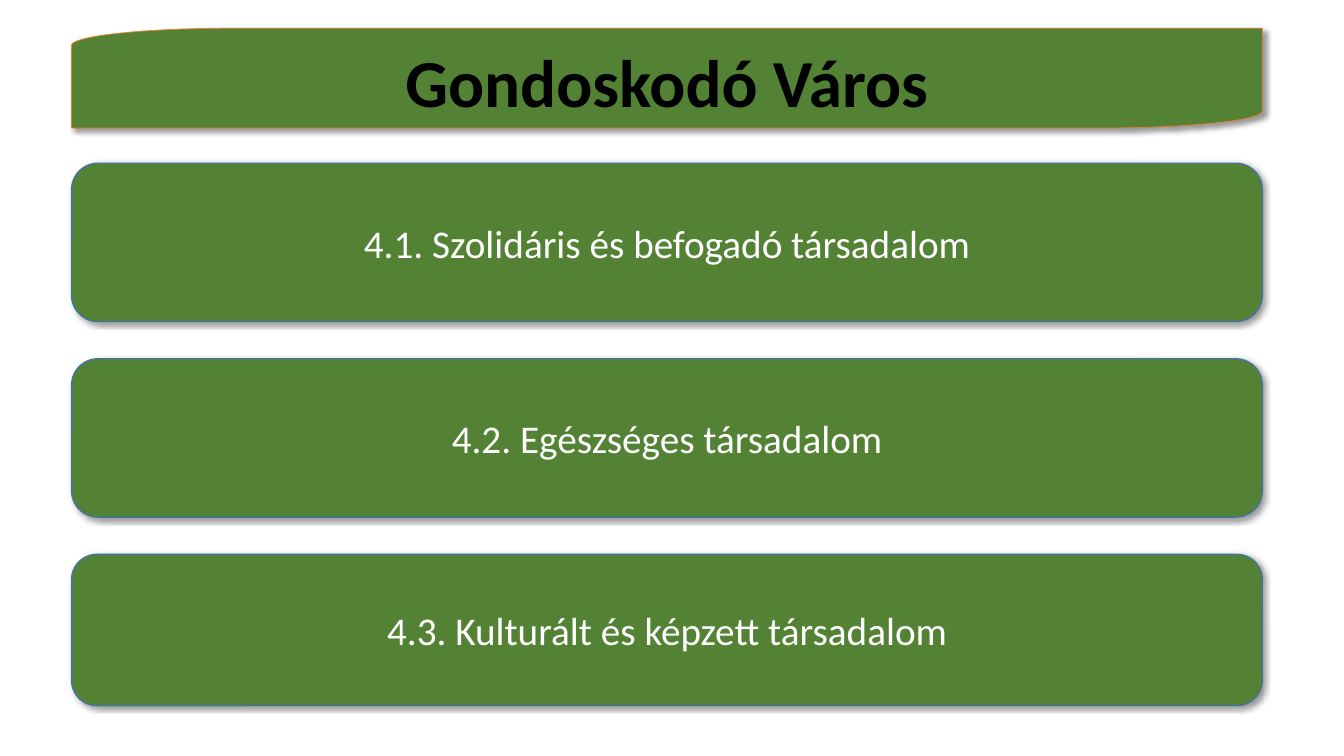
"""Build the caring city slide: a title banner above three goal panels."""
import math
from dataclasses import dataclass

import pptx
import pptx.dml.color
import pptx.enum.shapes
import pptx.enum.text
import pptx.oxml
import pptx.oxml.ns
import pptx.util
from pptx.util import Inches

COLORS = {
    "green": "548235",
    "orange": "ED7D31",
    "blue": "43739E",
    "black": "000000",
    "white": "FFFFFF",
}
FONT = "Calibri"
LEFT, WIDTH = 0.71, 11.81
BANNER_TOP, BANNER_HEIGHT = 0.28, 0.99
CORNER_WIDTH, CORNER_HEIGHT = 1.61, 0.17
CORNER_STEPS = 24
GOALS_TOP, GOAL_PITCH = 1.62, 1.94


@dataclass(frozen=True)
class Goal:
    """A goal of the city and the height of its panel in inches."""

    text: str
    height: float


GOALS = [
    Goal("4.1. Szolidáris és befogadó társadalom", 1.57),
    Goal("4.2. Egészséges társadalom", 1.57),
    Goal("4.3. Kulturált és képzett társadalom", 1.5),
]


def rgb(name: str) -> pptx.dml.color.RGBColor:
    """Return the named colour."""
    return pptx.dml.color.RGBColor.from_string(COLORS[name])


def style_panel(panel, line_color: str, line_width: float, distance: float) -> None:
    """Give a panel its green fill, outline and soft shadow."""
    panel.fill.solid()
    panel.fill.fore_color.rgb = rgb("green")
    panel.line.color.rgb = rgb(line_color)
    panel.line.width = pptx.util.Pt(line_width)
    panel.shadow.inherit = False
    effects = panel._element.spPr.find(pptx.oxml.ns.qn("a:effectLst"))
    effects.append(pptx.oxml.parse_xml(
        f'<a:outerShdw {pptx.oxml.ns.nsdecls("a")} blurRad="{pptx.util.Pt(4)}" '
        f'dist="{pptx.util.Pt(distance)}" dir="2700000" algn="tl" rotWithShape="0">'
        f'<a:srgbClr val="{COLORS["black"]}"><a:alpha val="40000"/></a:srgbClr>'
        "</a:outerShdw>"
    ))


def write_text(holder, text: str, size: float, color: str, bold: bool) -> None:
    """Write one centred line into a shape."""
    frame = holder.text_frame
    frame.text = text
    frame.word_wrap = True
    frame.auto_size = pptx.enum.text.MSO_AUTO_SIZE.NONE
    frame.vertical_anchor = pptx.enum.text.MSO_ANCHOR.MIDDLE
    paragraph = frame.paragraphs[0]
    paragraph.alignment = pptx.enum.text.PP_ALIGN.CENTER
    font = paragraph.runs[0].font
    font.name, font.size, font.bold = FONT, pptx.util.Pt(size), bold
    font.color.rgb = rgb(color)


def corner(center_x: float, center_y: float, start: float) -> list[tuple[int, int]]:
    """Return the points of a quarter ellipse from a start angle in degrees."""
    angles = [math.radians(start + 90 * step / CORNER_STEPS)
              for step in range(CORNER_STEPS + 1)]
    return [(Inches(center_x + CORNER_WIDTH * math.cos(angle)),
             Inches(center_y + CORNER_HEIGHT * math.sin(angle))) for angle in angles]


def add_banner(slide) -> None:
    """Draw the banner with two opposite rounded corners."""
    right, bottom = LEFT + WIDTH, BANNER_TOP + BANNER_HEIGHT
    outline = [
        *corner(LEFT + CORNER_WIDTH, BANNER_TOP + CORNER_HEIGHT, 180),
        (Inches(right), Inches(BANNER_TOP)),
        *corner(right - CORNER_WIDTH, bottom - CORNER_HEIGHT, 0),
        (Inches(LEFT), Inches(bottom)),
    ]
    builder = slide.shapes.build_freeform(*outline[0])
    builder.add_line_segments(outline[1:], close=True)
    style_panel(builder.convert_to_shape(), "orange", 0.5, 3)


def place_title(slide, text: str) -> None:
    """Set the slide title on the banner, in front of it."""
    title = slide.shapes.title
    title.left, title.top = Inches(LEFT), Inches(BANNER_TOP)
    title.width, title.height = Inches(WIDTH), Inches(BANNER_HEIGHT)
    write_text(title, text, 48, "black", True)
    frame = title.text_frame
    frame.margin_left = frame.margin_right = Inches(0.04)
    frame.margin_top = frame.margin_bottom = Inches(0.05)
    frame.paragraphs[0].line_spacing = 1.07
    frame.paragraphs[0].space_after = pptx.util.Pt(8)
    slide.shapes._spTree.append(title._element)


def add_goal(slide, goal: Goal, top: float) -> None:
    """Draw one rounded goal panel."""
    panel = slide.shapes.add_shape(
        pptx.enum.shapes.MSO_SHAPE.ROUNDED_RECTANGLE,
        Inches(LEFT), Inches(top), Inches(WIDTH), Inches(goal.height))
    style_panel(panel, "blue", 1, 2)
    write_text(panel, goal.text, 28, "white", False)


def main() -> None:
    """Build and save the slide."""
    deck = pptx.Presentation()
    deck.slide_width, deck.slide_height = Inches(13.33), Inches(7.5)
    slide = deck.slides.add_slide(deck.slide_layouts.get_by_name("Title Only"))
    add_banner(slide)
    place_title(slide, "Gondoskodó Város")
    for index, goal in enumerate(GOALS):
        add_goal(slide, goal, GOALS_TOP + index * GOAL_PITCH)
    deck.save("out.pptx")


if __name__ == "__main__":
    main()
